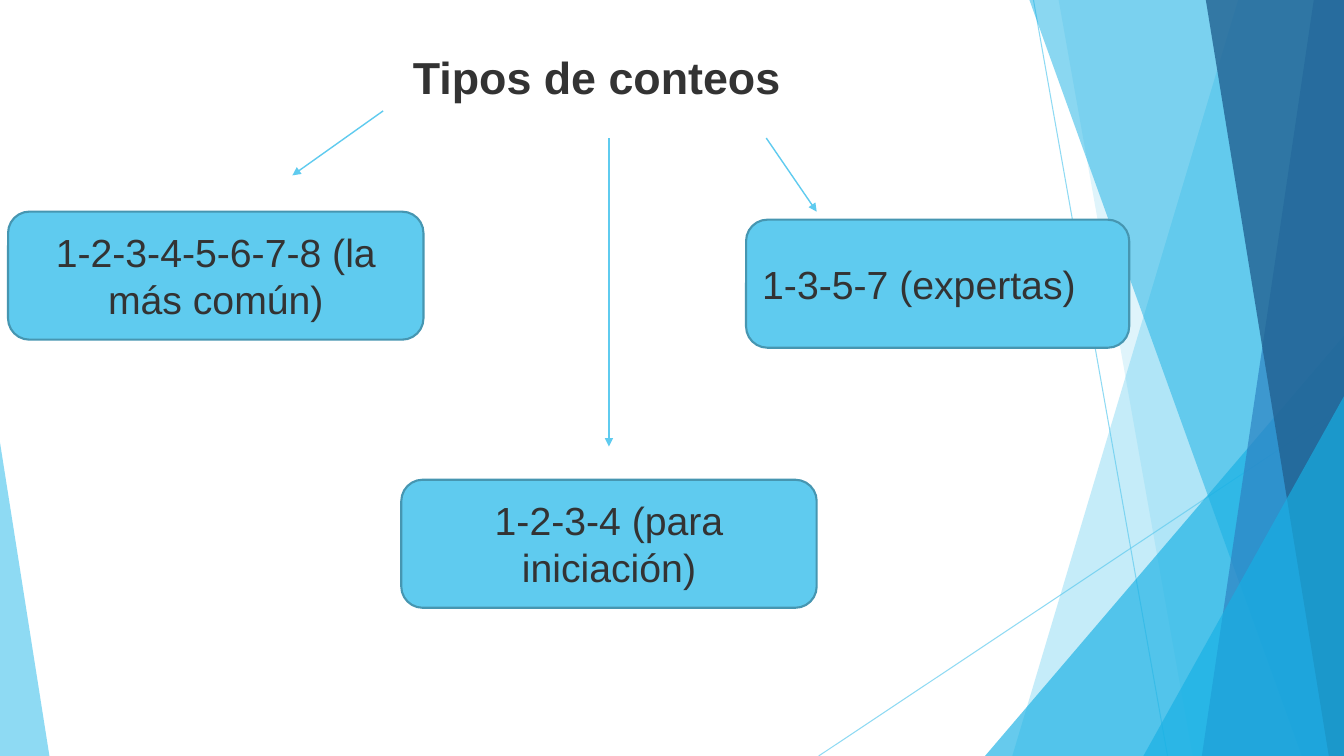
from pptx import Presentation
from pptx.dml.color import RGBColor
from pptx.enum.shapes import MSO_CONNECTOR, MSO_SHAPE
from pptx.enum.text import MSO_ANCHOR, PP_ALIGN
from pptx.oxml.ns import qn
from pptx.util import Inches, Pt
from lxml.etree import SubElement

WIDTH, HEIGHT = 13.33, 7.5
FONT = "Arial"
COLORS = {
    "sky": "5FCBEF",
    "cyan": "17B0E4",
    "blue": "2E83C3",
    "navy": "226292",
    "border": "4696B1",
    "text": "333333",
}

# top-left x, bottom-left x, colour, opacity
BANDS_BEHIND = [(12.28, 10.04, "sky", 36), (10.5, 11.83, "sky", 20)]
BANDS_FRONT = [
    (10.21, 12.91, "cyan", 50),
    (13.03, 11.92, "blue", 70),
    (11.96, 13.18, "navy", 80),
]

# left, top, width, label, alignment, space after
COUNTS = [
    (0.08, 2.1, 4.12, "1-2-3-4-5-6-7-8 (la más común)", PP_ALIGN.CENTER, 0),
    (7.4, 2.18, 3.8, "1-3-5-7 (expertas)", PP_ALIGN.JUSTIFY, 8),
    (3.98, 4.76, 4.12, "1-2-3-4 (para iniciación)", PP_ALIGN.CENTER, 0),
]
COUNT_HEIGHT = 1.27

ARROWS = [
    ((7.6, 1.37), (8.1, 2.1)),
    ((6.04, 1.37), (6.04, 4.43)),
    ((3.8, 1.1), (2.9, 1.74)),
]


def rgb(color):
    return RGBColor.from_string(COLORS[color])


def set_opacity(shape, percent):
    """Apply the opacity to the first colour set on the shape."""
    color = shape.element.spPr.find(".//" + qn("a:srgbClr"))
    SubElement(color, qn("a:alpha")).set("val", str(percent * 1000))


def paint_facet(facet, color, opacity):
    facet.shadow.inherit = False
    facet.fill.solid()
    facet.fill.fore_color.rgb = rgb(color)
    facet.line.fill.background()
    set_opacity(facet, opacity)


def add_band(slide, top_x, bottom_x, color, opacity):
    """Add a full-height band that reaches the right edge of the slide."""
    outline = slide.shapes.build_freeform(Inches(top_x), 0)
    corners = [(WIDTH, 0), (WIDTH, HEIGHT), (bottom_x, HEIGHT)]
    outline.add_line_segments([(Inches(x), Inches(y)) for x, y in corners])
    paint_facet(outline.convert_to_shape(), color, opacity)


def add_corner(slide, left, top, width, apex, color, opacity):
    """Add a triangle standing on the bottom edge of the slide."""
    corner = slide.shapes.add_shape(
        MSO_SHAPE.ISOSCELES_TRIANGLE,
        Inches(left), Inches(top), Inches(width), Inches(HEIGHT - top))
    corner.adjustments[0] = apex
    paint_facet(corner, color, opacity)


def add_line(slide, start, end, weight):
    line = slide.shapes.add_connector(
        MSO_CONNECTOR.STRAIGHT, *(Inches(n) for n in start + end))
    line.line.color.rgb = rgb("sky")
    line.line.width = Pt(weight)
    SubElement(line.element.spPr, qn("a:effectLst"))
    return line


def add_arrow(slide, start, end):
    arrow = add_line(slide, start, end, 1)
    outline = arrow.element.spPr.find(qn("a:ln"))
    SubElement(outline, qn("a:tailEnd")).set("type", "triangle")


def write(frame, text, size, align, space_after, bold=False):
    frame.word_wrap = True
    paragraph = frame.paragraphs[0]
    paragraph.alignment = align
    paragraph.space_after = Pt(space_after)
    run = paragraph.add_run()
    run.text = text
    run.font.name = FONT
    run.font.size = Pt(size)
    run.font.bold = bold
    run.font.color.rgb = rgb("text")


def add_title(slide, text):
    title = slide.shapes.add_textbox(
        Inches(2.02), Inches(0.44), Inches(7.8), Inches(1.87))
    write(title.text_frame, text, 32, PP_ALIGN.CENTER, 8, bold=True)


def add_count(slide, left, top, width, label, align, space_after):
    count = slide.shapes.add_shape(
        MSO_SHAPE.ROUNDED_RECTANGLE,
        Inches(left), Inches(top), Inches(width), Inches(COUNT_HEIGHT))
    count.shadow.inherit = False
    count.fill.solid()
    count.fill.fore_color.rgb = rgb("sky")
    count.line.color.rgb = rgb("border")
    count.line.width = Pt(1.5)
    count.text_frame.vertical_anchor = MSO_ANCHOR.MIDDLE
    write(count.text_frame, label, 28, align, space_after)


def add_backdrop(slide):
    for start, end in [((10.25, 0), (11.58, HEIGHT)),
                       ((WIDTH, 4.03), (8.12, HEIGHT))]:
        set_opacity(add_line(slide, start, end, 0.75), 70)
    for band in BANDS_BEHIND:
        add_band(slide, *band)
    add_corner(slide, 9.77, 3.33, 3.56, 1, "cyan", 66)
    for band in BANDS_FRONT:
        add_band(slide, *band)
    add_corner(slide, 11.34, 3.93, 1.99, 1, "cyan", 66)
    add_corner(slide, 0, 4.39, 0.49, 0, "sky", 70)


def main():
    presentation = Presentation()
    presentation.slide_width = Inches(WIDTH)
    presentation.slide_height = Inches(HEIGHT)
    slide = presentation.slides.add_slide(presentation.slide_layouts[6])
    add_backdrop(slide)
    add_title(slide, "Tipos de conteos")
    for count in COUNTS:
        add_count(slide, *count)
    for start, end in ARROWS:
        add_arrow(slide, start, end)
    presentation.save("out.pptx")


if __name__ == "__main__":
    main()
